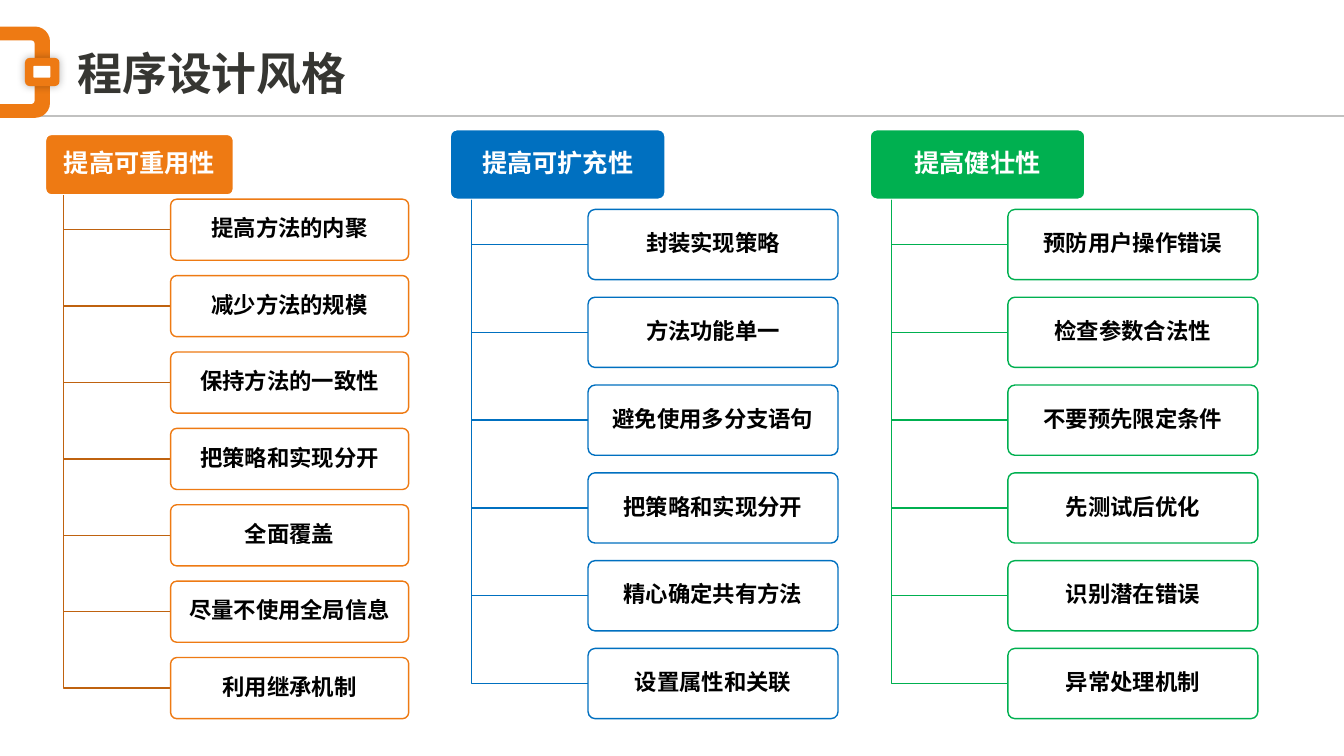
from dataclasses import dataclass

from lxml.etree import SubElement
from pptx import Presentation
from pptx.dml.color import RGBColor
from pptx.enum.shapes import MSO_CONNECTOR, MSO_SHAPE
from pptx.enum.text import MSO_ANCHOR, PP_ALIGN
from pptx.oxml.ns import qn
from pptx.util import Cm, Pt


@dataclass(frozen=True)
class Theme:
    font: str = "Arial"
    title_size: int = 32
    head_size: int = 18
    item_size: int = 16
    ink: str = "363632"
    rule: str = "C1C1C0"
    black: str = "000000"
    white: str = "FFFFFF"
    orange: str = "EE7A13"
    brown: str = "BF620F"
    blue: str = "0070C0"
    green: str = "00B050"


@dataclass(frozen=True)
class TreeSize:
    """Lengths in centimetres, offsets counted from the left of the tree."""
    node_height: float
    head_width: float
    item_width: float
    stem_offset: float
    item_offset: float


THEME = Theme()
TREE_BOTTOM = 18.11
NARROW = TreeSize(1.54, 4.75, 6.0, 0.46, 3.16)
WIDE = TreeSize(1.77, 5.43, 6.3, 0.54, 3.48)

TREES = [
    (1.14, 3.38, NARROW, THEME.orange, THEME.brown, "提高可重用性",
     ["提高方法的内聚", "减少方法的规模", "保持方法的一致性", "把策略和实现分开",
      "全面覆盖", "尽量不使用全局信息", "利用继承机制"]),
    (11.34, 3.26, WIDE, THEME.blue, THEME.blue, "提高可扩充性",
     ["封装实现策略", "方法功能单一", "避免使用多分支语句", "把策略和实现分开",
      "精心确定共有方法", "设置属性和关联"]),
    (21.92, 3.26, WIDE, THEME.green, THEME.green, "提高健壮性",
     ["预防用户操作错误", "检查参数合法性", "不要预先限定条件", "先测试后优化",
      "识别潜在错误", "异常处理机制"]),
]


def rgb(color):
    return RGBColor.from_string(color)


def set_all(target, values):
    for name, value in values.items():
        setattr(target, name, value)


def write_text(shape, text, size, color, align, **frame_format):
    frame = shape.text_frame
    set_all(frame, {"word_wrap": True, "vertical_anchor": MSO_ANCHOR.MIDDLE, **frame_format})
    para = frame.paragraphs[0]
    para.alignment = align
    span = para.add_run()
    span.text = text
    set_all(span.font, {"name": THEME.font, "size": Pt(size), "bold": True})
    span.font.color.rgb = rgb(color)
    return para


def add_box(page, kind, box, fill, line=None, line_width=1, corner=None):
    """Draw a filled preset shape; box is left, top, width, height in centimetres."""
    shape = page.shapes.add_shape(kind, *(Cm(length) for length in box))
    shape.shadow.inherit = False
    shape.fill.solid()
    shape.fill.fore_color.rgb = rgb(fill)
    if line:
        shape.line.color.rgb = rgb(line)
        shape.line.width = Pt(line_width)
    else:
        shape.line.fill.background()
    if corner is not None:
        shape.adjustments[0] = corner
    return shape


def add_side_tab(page, top, width, height, fill, corner):
    """Draw a block on the left slide edge, rounded on its right side only."""
    box = ((width - height) / 2, top + (height - width) / 2, height, width)
    add_box(page, MSO_SHAPE.ROUND_2_SAME_RECTANGLE, box, fill, corner=corner).rotation = 90


def add_glow(shape):
    effects = shape._element.spPr.find(qn("a:effectLst"))
    shadow = SubElement(effects, qn("a:outerShdw"), blurRad=str(Pt(6)), algn="ctr", rotWithShape="0")
    color = SubElement(shadow, qn("a:srgbClr"), val=THEME.black)
    SubElement(color, qn("a:alpha"), val="30000")


def add_header(page, text, left, top, width):
    rule = page.shapes.add_connector(
        MSO_CONNECTOR.STRAIGHT, Cm(0.64), Cm(top + 2.25), Cm(width), Cm(top + 2.25))
    SubElement(rule._element.spPr, qn("a:effectLst"))
    rule.line.color.rgb = rgb(THEME.rule)
    rule.line.width = Pt(1)

    add_side_tab(page, top, 1.26, 2.3, THEME.orange, 0.3)
    add_side_tab(page, top + 0.35, 0.87, 1.6, THEME.white, 0.09)
    link = add_box(page, MSO_SHAPE.ROUNDED_RECTANGLE, (0.63, top + 0.79, 0.87, 0.71), THEME.orange)
    add_glow(link)
    add_box(page, MSO_SHAPE.ROUNDED_RECTANGLE, (0.84, top + 0.99, 0.43, 0.3), THEME.white, corner=0.1)

    title = page.shapes.title
    set_all(title, {"left": Cm(left), "top": Cm(top + 0.35), "width": Cm(31.27), "height": Cm(1.62)})
    write_text(title, text, THEME.title_size, THEME.ink, PP_ALIGN.LEFT)


def add_node(page, box, text, size, color, fill, line, line_width):
    shape = add_box(page, MSO_SHAPE.ROUNDED_RECTANGLE, box, fill, line, line_width, corner=0.1)
    margins = {"margin_left": Cm(0.1), "margin_right": Cm(0.1),
               "margin_top": Cm(0.08), "margin_bottom": Cm(0.08)}
    para = write_text(shape, text, size, color, PP_ALIGN.CENTER, **margins)
    para.line_spacing = 0.9


def add_elbow(page, stem, top, right, middle, color):
    builder = page.shapes.build_freeform(Cm(stem), Cm(top))
    builder.add_line_segments([(Cm(stem), Cm(middle)), (Cm(right), Cm(middle))], close=False)
    elbow = builder.convert_to_shape()
    elbow.shadow.inherit = False
    elbow.fill.background()
    elbow.line.color.rgb = rgb(color)
    elbow.line.width = Pt(1)


def add_tree(page, left, top, size, color, branch_color, head, items):
    """Draw a heading with items hanging below it, the last one ending at TREE_BOTTOM."""
    height = size.node_height
    pitch = 1.25 * height
    first_top = TREE_BOTTOM - height - pitch * (len(items) - 1)
    item_left = left + size.item_offset
    add_node(page, (left, top, size.head_width, height), head,
             THEME.head_size, THEME.white, color, THEME.white, 1.5)
    for index, item in enumerate(items):
        item_top = first_top + index * pitch
        add_elbow(page, left + size.stem_offset, top + height, item_left,
                  item_top + height / 2, branch_color)
        add_node(page, (item_left, item_top, size.item_width, height), item,
                 THEME.item_size, THEME.black, THEME.white, color, 1)


def main():
    deck = Presentation()
    deck.slide_width, deck.slide_height = Cm(33.87), Cm(19.05)
    page = deck.slides.add_slide(deck.slide_layouts[5])
    add_header(page, "程序设计风格", left=1.7, top=0.67, width=33.87)
    for tree in TREES:
        add_tree(page, *tree)
    deck.save("out.pptx")


if __name__ == "__main__":
    main()
